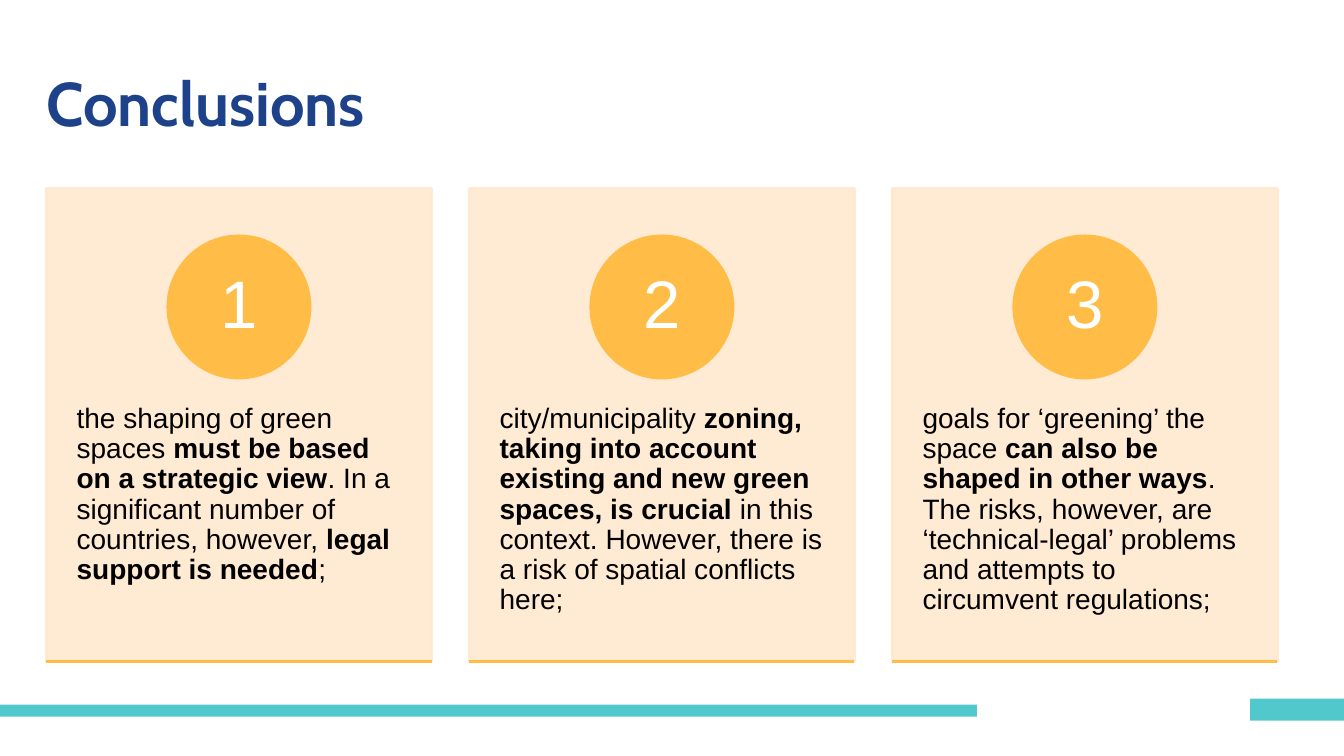
from dataclasses import dataclass

from lxml.etree import SubElement
from pptx import Presentation
from pptx.dml.color import RGBColor
from pptx.enum.shapes import MSO_CONNECTOR, MSO_SHAPE
from pptx.enum.text import MSO_ANCHOR, PP_ALIGN
from pptx.oxml.ns import qn
from pptx.shapes.autoshape import Shape
from pptx.slide import Slide
from pptx.text.text import TextFrame
from pptx.util import Inches, Pt

NAVY = RGBColor(0x1D, 0x42, 0x89)
TEAL = RGBColor(0x50, 0xC8, 0xCC)
PEACH = RGBColor(0xFF, 0xE8, 0xCF)
AMBER = RGBColor(0xFF, 0xBD, 0x47)
BLACK = RGBColor(0x00, 0x00, 0x00)
WHITE = RGBColor(0xFF, 0xFF, 0xFF)

CARD_LEFT, CARD_TOP, CARD_WIDTH, CARD_HEIGHT = 0.46, 1.87, 3.82, 4.69
CARD_PITCH = 4.195
CIRCLE_SIZE = 1.41
CIRCLE_TOP = 2.34
BODY_TOP, BODY_HEIGHT = 3.65, 2.81


@dataclass(frozen=True)
class Area:
    left: float
    top: float
    width: float
    height: float


@dataclass(frozen=True)
class Phrase:
    text: str
    bold: bool = False


BARS = [Area(0, 6.99, 9.69, 0.12), Area(12.4, 6.93, 0.93, 0.22)]

CONCLUSIONS = [
    [
        Phrase("the shaping of green spaces "),
        Phrase("must be based on a strategic view", True),
        Phrase(". In a significant number of countries, however, "),
        Phrase("legal support is needed", True),
        Phrase(";"),
    ],
    [
        Phrase("city/municipality "),
        Phrase("zoning, taking into account existing and new green spaces, is crucial ", True),
        Phrase("in this context. However, there is a risk of spatial conflicts here;"),
    ],
    [
        Phrase("goals for ‘greening’ the space "),
        Phrase("can also be shaped in other ways", True),
        Phrase(
            ". The risks, however, are ‘technical-legal’ problems "
            "and attempts to circumvent regulations;"
        ),
    ],
]


def set_insets(frame: TextFrame, sides: float, ends: float) -> None:
    frame.margin_left = frame.margin_right = Inches(sides)
    frame.margin_top = frame.margin_bottom = Inches(ends)


def add_block(
    page: Slide, kind: MSO_SHAPE, area: Area, color: RGBColor, outlined: bool = True
) -> Shape:
    block = page.shapes.add_shape(
        kind, Inches(area.left), Inches(area.top), Inches(area.width), Inches(area.height)
    )
    block.shadow.inherit = False
    block.fill.solid()
    block.fill.fore_color.rgb = color
    if outlined:
        block.line.color.rgb = color
        block.line.width = Pt(2)
    else:
        block.line.fill.background()
    return block


def add_panel(page: Slide, left: float) -> None:
    area = Area(left, CARD_TOP, CARD_WIDTH, CARD_HEIGHT)
    panel = add_block(page, MSO_SHAPE.RECTANGLE, area, PEACH)
    for color in panel._element.spPr.findall(".//" + qn("a:srgbClr")):
        SubElement(color, qn("a:alpha")).set("val", "90000")


def add_body(page: Slide, left: float, phrases: list[Phrase]) -> None:
    box = page.shapes.add_textbox(
        Inches(left), Inches(BODY_TOP), Inches(CARD_WIDTH), Inches(BODY_HEIGHT)
    )
    frame = box.text_frame
    frame.word_wrap = True
    set_insets(frame, 0.3, 0.36)
    para = frame.paragraphs[0]
    para.line_spacing = 0.9
    for phrase in phrases:
        span = para.add_run()
        span.text = phrase.text
        span.font.name = "Arial"
        span.font.size = Pt(20)
        span.font.bold = phrase.bold
        span.font.color.rgb = BLACK


def add_number(page: Slide, left: float, number: int) -> None:
    circle_left = left + (CARD_WIDTH - CIRCLE_SIZE) / 2
    area = Area(circle_left, CIRCLE_TOP, CIRCLE_SIZE, CIRCLE_SIZE)
    circle = add_block(page, MSO_SHAPE.OVAL, area, AMBER)
    frame = circle.text_frame
    frame.text = str(number)
    frame.vertical_anchor = MSO_ANCHOR.MIDDLE
    set_insets(frame, 0.11, 0.01)
    para = frame.paragraphs[0]
    para.alignment = PP_ALIGN.CENTER
    para.line_spacing = 0.9
    font = para.runs[0].font
    font.name = "Arial"
    font.size = Pt(48)
    font.color.rgb = WHITE


def add_underline(page: Slide, left: float) -> None:
    bottom = Inches(CARD_TOP + CARD_HEIGHT)
    rule = page.shapes.add_connector(
        MSO_CONNECTOR.STRAIGHT, Inches(left), bottom, Inches(left + CARD_WIDTH), bottom
    )
    rule.line.color.rgb = AMBER
    rule.line.width = Pt(2)
    SubElement(rule._element.spPr, qn("a:effectLst"))


def add_card(page: Slide, index: int, phrases: list[Phrase]) -> None:
    left = CARD_LEFT + index * CARD_PITCH
    add_panel(page, left)
    add_body(page, left, phrases)
    add_number(page, left, index + 1)
    add_underline(page, left)


def format_title(page: Slide) -> None:
    title = page.shapes.title
    title.left, title.top = Inches(0.41), Inches(0.46)
    title.width, title.height = Inches(12.26), Inches(1.2)
    frame = title.text_frame
    frame.text = "Conclusions"
    frame.vertical_anchor = MSO_ANCHOR.MIDDLE
    set_insets(frame, 0.05, 0.05)
    para = frame.paragraphs[0]
    para.alignment = PP_ALIGN.LEFT
    para.line_spacing = 0.9
    font = para.runs[0].font
    font.name = "Cabin"
    font.size = Pt(44)
    font.bold = True
    font.color.rgb = NAVY


def main() -> None:
    deck = Presentation()
    deck.slide_width, deck.slide_height = Inches(13.33), Inches(7.5)
    page = deck.slides.add_slide(deck.slide_layouts[5])
    format_title(page)
    for bar in BARS:
        add_block(page, MSO_SHAPE.RECTANGLE, bar, TEAL, outlined=False)
    for index, phrases in enumerate(CONCLUSIONS):
        add_card(page, index, phrases)
    deck.save("out.pptx")


if __name__ == "__main__":
    main()
